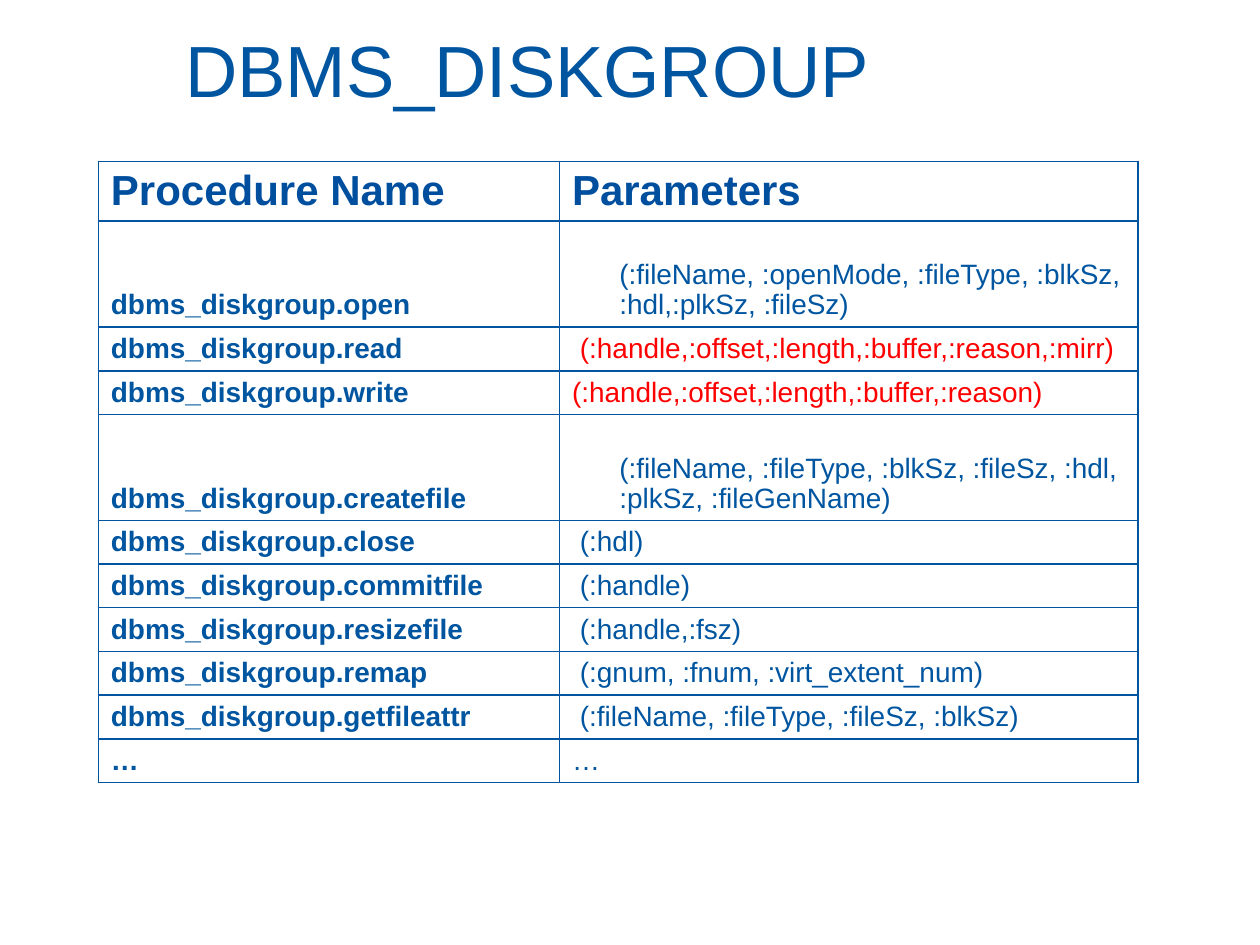
from dataclasses import dataclass

from pptx import Presentation
from pptx.dml.color import RGBColor
from pptx.enum import text
from pptx.oxml import parse_xml
from pptx.oxml.ns import nsdecls
from pptx.util import Pt


@dataclass(frozen=True)
class Theme:
    font: str = "Arial"
    blue: str = "0055A0"
    navy: str = "004F9E"
    red: str = "FF0000"
    title: float = 41.4
    head: float = 24
    body: float = 16
    line: float = 1


@dataclass(frozen=True)
class Row:
    name: str
    args: str
    high: float = 25
    left: float = 4.5
    tint: str = Theme.blue


ROWS = [
    Row("open", "(:fileName, :openMode, :fileType, :blkSz, :hdl,:plkSz, :fileSz)", 60.5, 27),
    Row("read", "(:handle,:offset,:length,:buffer,:reason,:mirr)", tint=Theme.red),
    Row("write", "(:handle,:offset,:length,:buffer,:reason)", left=0, tint=Theme.red),
    Row("createfile", "(:fileName, :fileType, :blkSz, :fileSz, :hdl, :plkSz, :fileGenName)", 60.5, 27),
    Row("close", "(:hdl)"),
    Row("commitfile", "(:handle)"),
    Row("resizefile", "(:handle,:fsz)"),
    Row("remap", "(:gnum, :fnum, :virt_extent_num)"),
    Row("getfileattr", "(:fileName, :fileType, :fileSz, :blkSz)"),
]


def write(para, words: str, size: float, tint: str, bold: bool = False) -> None:
    run = para.add_run()
    run.text = words
    font = run.font
    font.name, font.size, font.bold = Theme.font, Pt(size), bold
    font.color.rgb = RGBColor.from_string(tint)


def frame(cell) -> None:
    props = cell._tc.get_or_add_tcPr()
    for index, side in enumerate(("lnL", "lnR", "lnT", "lnB")):
        props.insert(index, parse_xml(
            f'<a:{side} {nsdecls("a")} w="{Pt(Theme.line)}"><a:solidFill>'
            f'<a:srgbClr val="{Theme.blue}"/></a:solidFill></a:{side}>'))


def put(cell, words: str, size: float, tint: str, bold: bool, left: float = 0) -> None:
    cell.fill.background()
    frame(cell)
    cell.vertical_anchor = text.MSO_ANCHOR.BOTTOM
    para = cell.text_frame.paragraphs[0]
    props = para._p.get_or_add_pPr()
    props.set("marL", str(Pt(left)))
    props.set("indent", "0")
    para.line_spacing = 0.96
    write(para, words, size, tint, bold)


def head(slide) -> None:
    title = slide.shapes.title
    title.left, title.top, title.width, title.height = Pt(102.2), Pt(5.8), Pt(437.8), Pt(66.2)
    body = title.text_frame
    body.margin_left = body.margin_right = body.margin_top = body.margin_bottom = Pt(3.6)
    body.vertical_anchor = text.MSO_ANCHOR.MIDDLE
    para = body.paragraphs[0]
    para.alignment = text.PP_ALIGN.LEFT
    write(para, "DBMS_DISKGROUP", Theme.title, Theme.blue)


def grid(slide) -> None:
    highs = [34.2, *(row.high for row in ROWS), 25]
    wides = [263.5, 330.5]
    table = slide.shapes.add_table(
        len(highs), len(wides), Pt(56.2), Pt(92.2), Pt(sum(wides)), Pt(sum(highs))).table
    table.horz_banding = False
    for col, wide in zip(table.columns, wides):
        col.width = Pt(wide)
    for line, high in zip(table.rows, highs):
        line.height = Pt(high)
    for col, words in enumerate(("Procedure Name", "Parameters")):
        put(table.cell(0, col), words, Theme.head, Theme.navy, True)
        put(table.cell(len(ROWS) + 1, col), "…", Theme.body, Theme.blue, col == 0)
    for index, row in enumerate(ROWS, 1):
        put(table.cell(index, 0), f"dbms_diskgroup.{row.name}", Theme.body, Theme.blue, True)
        put(table.cell(index, 1), row.args, Theme.body, row.tint, False, row.left)


def main() -> None:
    deck = Presentation()
    deck.slide_width, deck.slide_height = Pt(720), Pt(540)
    slide = deck.slides.add_slide(deck.slide_layouts[5])
    head(slide)
    grid(slide)
    deck.save("out.pptx")


if __name__ == "__main__":
    main()
